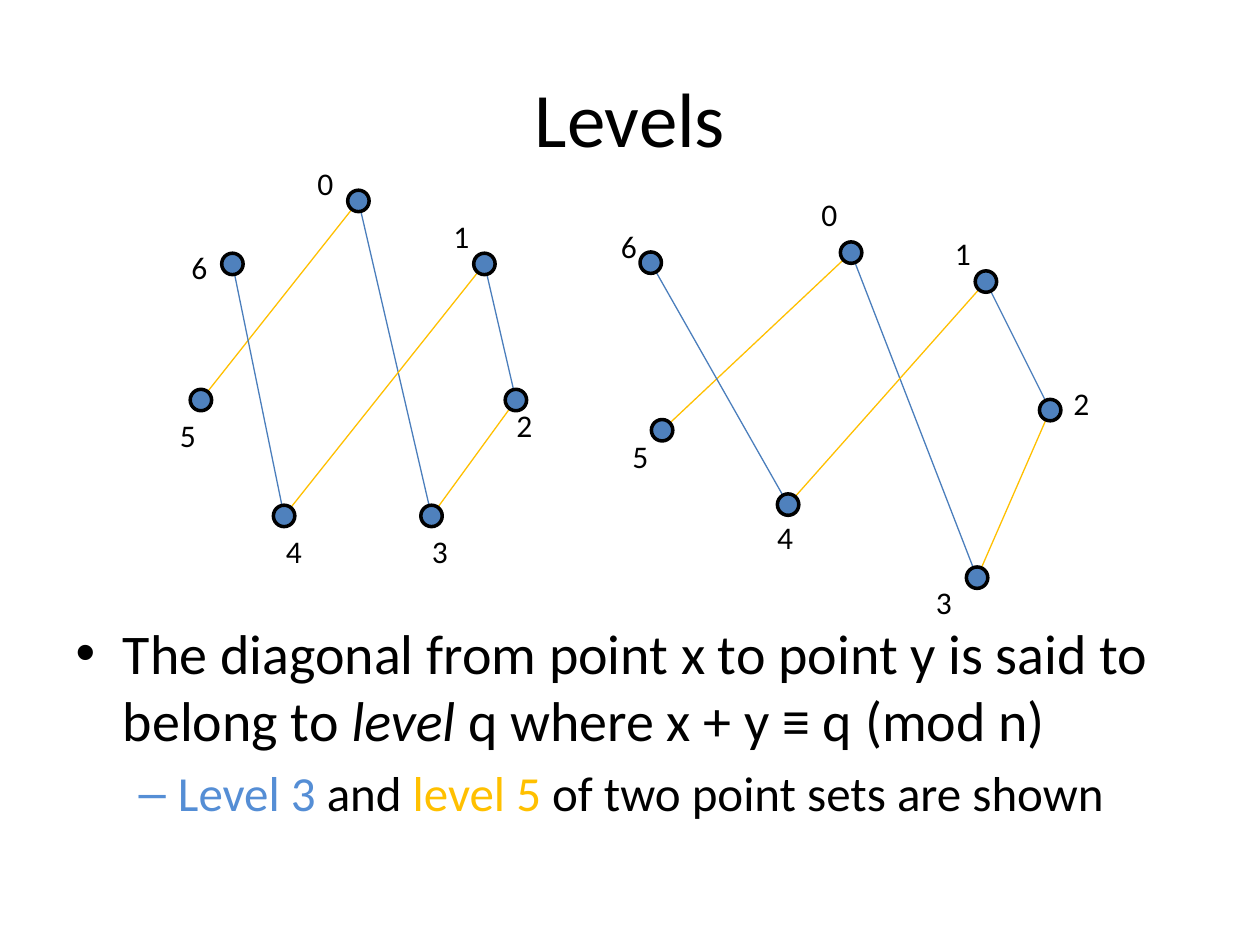
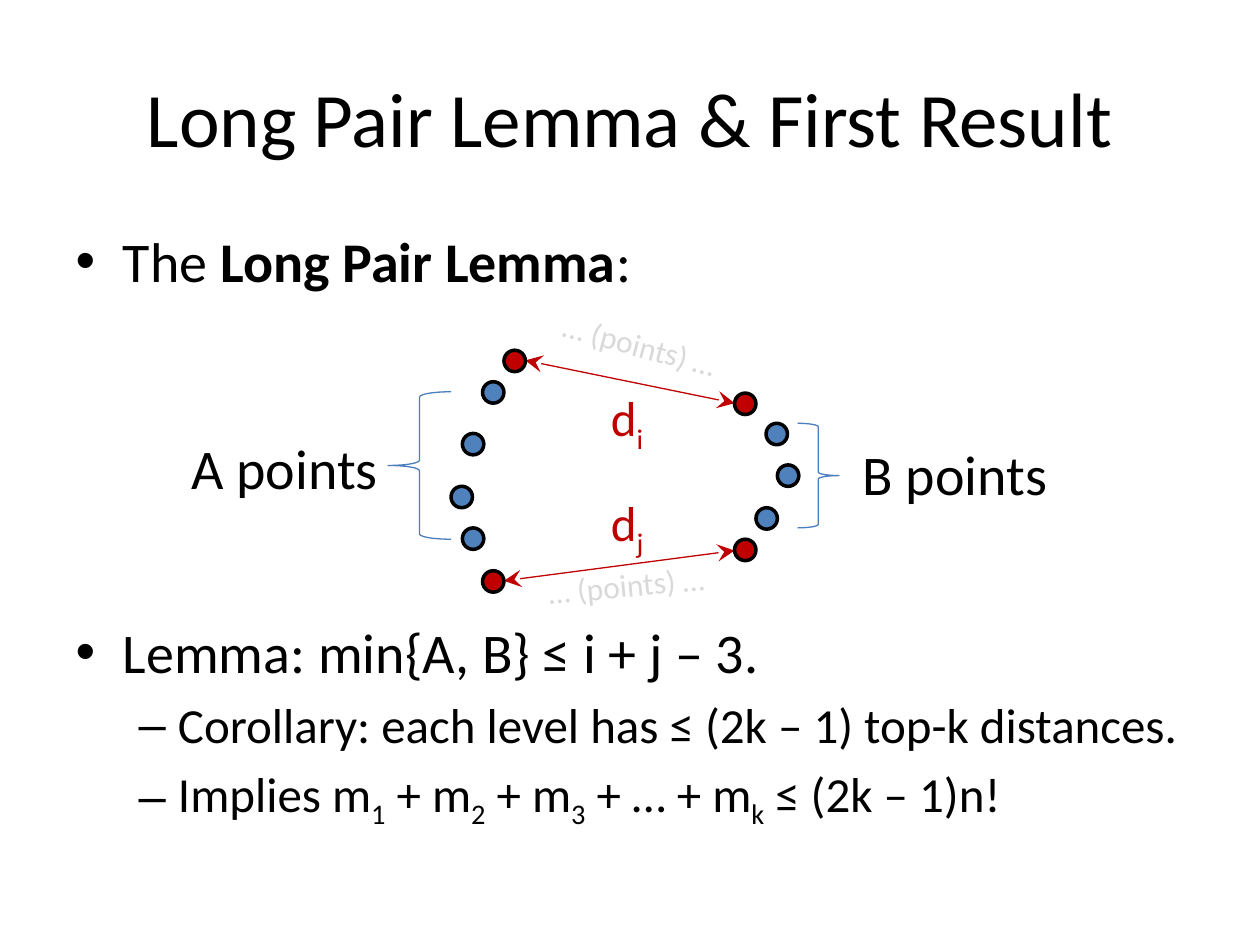
from itertools import combinations
from lxml.etree import SubElement
from pptx import Presentation
from pptx.dml.color import RGBColor
from pptx.enum.shapes import MSO_CONNECTOR, MSO_SHAPE
from pptx.enum.text import MSO_AUTO_SIZE, PP_ALIGN
from pptx.oxml.ns import qn
from pptx.util import Inches, Pt

# Colours and text formats
BLACK = RGBColor(0x00, 0x00, 0x00)
BLUE = RGBColor(0x4F, 0x81, 0xBD)
LINE = RGBColor(0x4B, 0x7E, 0xBC)
SKY = RGBColor(0x55, 0x8E, 0xD5)
GOLD = RGBColor(0xFF, 0xC0, 0x00)
RED = RGBColor(0xC0, 0x00, 0x00)
GREY = RGBColor(0xD9, 0xD9, 0xD9)

HEAD = {"name": "Calibri", "size": Pt(44), "color": BLACK}
MAIN = HEAD | {"size": Pt(32)}
ITEM = HEAD | {"size": Pt(28)}
SMALL = HEAD | {"size": Pt(18)}
FAINT = SMALL | {"color": GREY, "edge": True}
DIST = ITEM | {"color": RED, "edge": True}
SUB = {"base": -25000}
DOT = 0.17


def write(para, runs, form):
    """Add runs of (text, changes) on top of a base format."""
    for text, change in runs:
        run = para.add_run()
        run.text = text
        for key, value in (form | change).items():
            if key == "color":
                run.font.color.rgb = value
            elif key == "base":
                run._r.get_or_add_rPr().set("baseline", str(value))
            elif key != "edge":
                setattr(run.font, key, value)
        if "edge" in form:
            props = run._r.get_or_add_rPr()
            edge = SubElement(props, qn("a:ln"), w=str(Pt(0.75)))
            fill = SubElement(edge, qn("a:solidFill"))
            SubElement(fill, qn("a:srgbClr"), val=str(form["color"]))
            props.insert(0, edge)


# Slide 1: two point sets as (dot x, dot y, label x, label y), numbered from 0
sets = [
    [(2.76, 1.51, 2.42, 1.25), (3.76, 2.01, 3.5, 1.67), (4.01, 3.09, 4, 3.17),
     (3.34, 4.01, 3.33, 4.17), (2.17, 4.01, 2.17, 4.17),
     (1.51, 3.09, 1.33, 3.25), (1.76, 2.01, 1.42, 1.92)],
    [(6.67, 1.92, 6.42, 1.5), (7.74, 2.15, 7.48, 1.81), (8.25, 3.17, 8.42, 3),
     (7.67, 4.5, 7.33, 4.58), (6.17, 3.92, 6.07, 4.06),
     (5.17, 3.33, 4.92, 3.42), (5.08, 2, 4.83, 1.75)],
]
levels = {3: LINE, 5: GOLD}
links, notes, dots = [], [], []
for points in sets:
    for a, b in combinations(range(len(points)), 2):
        level = (a + b) % len(points)
        if level in levels:
            ends = [v + DOT / 2 for v in points[a][:2] + points[b][:2]]
            links.append((ends, levels[level], False))
    for num, (x, y, left, top) in enumerate(points):
        notes.append(([(str(num), {})], (left, top, 0.33, 0.4), 0, SMALL))
        dots.append((x, y, BLUE))

first = {
    "title": "Levels", "high": 4.95, "inset": 3.16,
    "body": [
        (0, [("The diagonal from point x to point y is said to belong to ", {}),
             ("level", {"italic": True}),
             (" q where x + y ≡ q (mod n)", {})], None),
        (1, [("Level 3 ", {"color": SKY}), ("and ", {}),
             ("level 5", {"color": GOLD}),
             (" of two point sets are shown", {})], None),
    ],
    "links": links, "notes": notes, "dots": dots, "braces": [],
}

# Slide 2: two long pairs with the points between them
ends = [(5.83, 3.12), (5.83, 4.28), (4, 2.78), (3.83, 4.53)]
inner = [(6.08, 3.36), (6.17, 3.69), (6, 4.03),
         (3.83, 3.03), (3.67, 3.44), (3.67, 4.19), (3.58, 3.86)]
terms = [("Implies m", {}), ("1", SUB), (" + m", {}), ("2", SUB),
         (" + m", {}), ("3", SUB), (" + … + m", {}), ("k", SUB),
         (" ≤ (2k – 1)n!", {})]
second = {
    "title": "Long Pair Lemma & First Result", "high": 5.08, "inset": 0.05,
    "body": [
        (0, [("The ", {}), ("Long Pair Lemma", {"bold": True}), (":", {})], None),
        (0, [("Lemma: min{A, B} ≤ i + j – 3.", {})], Pt(185)),
        (1, [("Corollary: each level has ≤ (2k – 1) top-k distances.", {})], None),
        (1, terms, None),
    ],
    "links": [((4.17, 2.86, 5.83, 3.2), RED, True),
              ((4, 4.61, 5.83, 4.37), RED, True)],
    "notes": [
        ([("… (points) …", {})], (4.36, 2.54, 1.46, 0.4), 14.9, FAINT),
        ([("… (points) …", {})], (4.25, 4.44, 1.46, 0.4), 354.5, FAINT),
        ([("B points", {})], (6.75, 3.44, 1.68, 0.64), 0, MAIN),
        ([("A points", {})], (1.42, 3.39, 1.68, 0.64), 0, MAIN),
        ([("d", {}), ("i", SUB)], (4.75, 3.03, 0.47, 0.57), 0, DIST),
        ([("d", {}), ("j", SUB)], (4.75, 3.86, 0.47, 0.57), 0, DIST),
    ],
    "dots": [(x, y, RED) for x, y in ends] + [(x, y, BLUE) for x, y in inner],
    "braces": [(MSO_SHAPE.LEFT_BRACE, (3.08, 3.11, 0.5, 1.17)),
               (MSO_SHAPE.RIGHT_BRACE, (6.33, 3.36, 0.33, 0.83))],
}

# Build both slides
deck = Presentation()
deck.slide_width, deck.slide_height = Inches(10), Inches(7.5)
for page in (first, second):
    slide = deck.slides.add_slide(deck.slide_layouts[1])
    shapes = slide.shapes

    # Title and list
    title, body = slide.placeholders[0], slide.placeholders[1]
    for holder, top, high in ((title, 0.3, 1.25), (body, 1.75, page["high"])):
        holder.left, holder.top = Inches(0.5), Inches(top)
        holder.width, holder.height = Inches(9), Inches(high)
        holder.text_frame.auto_size = MSO_AUTO_SIZE.NONE
    para = title.text_frame.paragraphs[0]
    para.alignment = PP_ALIGN.CENTER
    write(para, [(page["title"], {})], HEAD)
    frame = body.text_frame
    frame.margin_top = Inches(page["inset"])
    for i, (depth, runs, gap) in enumerate(page["body"]):
        para = frame.add_paragraph() if i else frame.paragraphs[0]
        para.level = depth
        if gap:
            para.space_before = gap
        write(para, runs, ITEM if depth else MAIN)

    # Diagonals and arrows
    for coords, color, arrow in page["links"]:
        link = shapes.add_connector(MSO_CONNECTOR.STRAIGHT,
                                    *[Inches(v) for v in coords])
        link.line.color.rgb, link.line.width = color, Pt(0.75)
        if arrow:
            for tip in ("a:headEnd", "a:tailEnd"):
                SubElement(link.line._get_or_add_ln(), qn(tip), type="stealth",
                           w="lg", len="lg")
        SubElement(link._element.spPr, qn("a:effectLst"))

    # Labels
    for runs, area, turn, form in page["notes"]:
        note = shapes.add_textbox(*[Inches(v) for v in area])
        note.rotation = turn
        note.text_frame.word_wrap = False
        note.text_frame.auto_size = MSO_AUTO_SIZE.SHAPE_TO_FIT_TEXT
        write(note.text_frame.paragraphs[0], runs, form)

    # Points
    for x, y, color in page["dots"]:
        dot = shapes.add_shape(MSO_SHAPE.OVAL, Inches(x), Inches(y),
                               Inches(DOT), Inches(DOT))
        dot.shadow.inherit = False
        dot.fill.solid()
        dot.fill.fore_color.rgb = color
        dot.line.color.rgb, dot.line.width = BLACK, Pt(2)

    # Braces
    for kind, area in page["braces"]:
        brace = shapes.add_shape(kind, *[Inches(v) for v in area])
        brace.shadow.inherit = False
        brace.fill.background()
        brace.line.color.rgb, brace.line.width = LINE, Pt(0.75)

deck.save("out.pptx")
